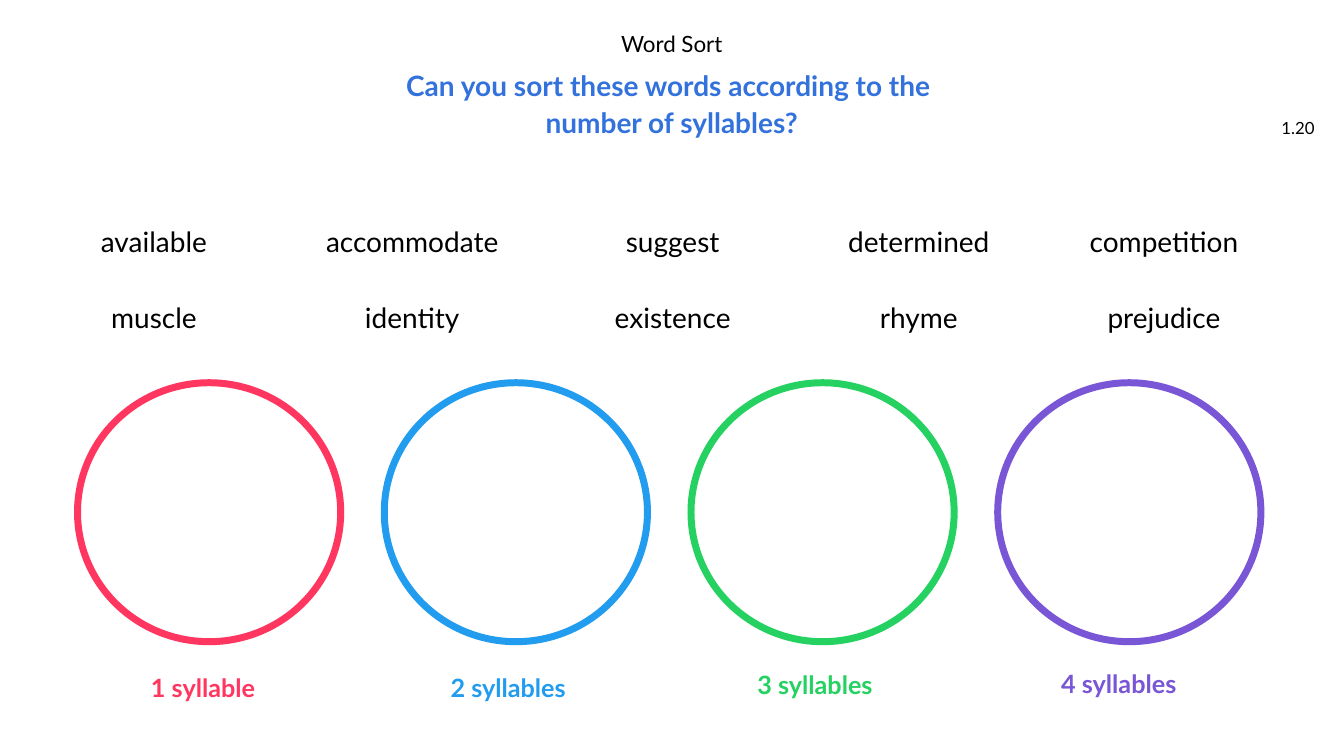
from pptx import Presentation
from pptx.dml.color import RGBColor
from pptx.enum.shapes import MSO_SHAPE
from pptx.enum.text import MSO_ANCHOR, MSO_AUTO_SIZE, PP_ALIGN
from pptx.util import Pt

CENTER, LEFT, RIGHT = PP_ALIGN.CENTER, PP_ALIGN.LEFT, PP_ALIGN.RIGHT
TOP, MIDDLE = MSO_ANCHOR.TOP, MSO_ANCHOR.MIDDLE
FIXED = MSO_AUTO_SIZE.NONE
OVAL = MSO_SHAPE.OVAL
TITLE_ONLY = 5

FONT = "Lato"
COLORS = {
    "black": "000000",
    "title": "3372DC",
    "red": "FF3760",
    "blue": "219CEE",
    "green": "25D160",
    "purple": "7956D6",
}
WORD_ROWS = [
    ["available", "accommodate", "suggest", "determined", "competition"],
    ["muscle", "identity", "existence", "rhyme", "prejudice"],
]
WORD_CENTERS = [110, 294.5, 480.5, 656.3, 831.5]
GROUPS = [
    ("1 syllable", "red", 45.4, 203.2),
    ("2 syllables", "blue", 40.3, 203.2),
    ("3 syllables", "green", 40.3, 201),
    ("4 syllables", "purple", 38.2, 200.4),
]


def place(shape, left, top, width, height):
    shape.left, shape.top = Pt(left), Pt(top)
    shape.width, shape.height = Pt(width), Pt(height)


def write(shape, text, size=20, color="black", bold=False, align=CENTER,
          anchor=MIDDLE, spacing=None, wrap=True):
    frame = shape.text_frame
    frame.auto_size = FIXED
    frame.word_wrap = wrap
    frame.vertical_anchor = anchor
    frame.text = text
    for para in frame.paragraphs:
        para.alignment = align
        para.line_spacing = spacing
        for span in para.runs:
            span.font.name = FONT
            span.font.size = Pt(size)
            span.font.bold = bold
            span.font.color.rgb = RGBColor.from_string(COLORS[color])


def add_text(page, box, text, **style):
    shape = page.shapes.add_textbox(*map(Pt, box))
    write(shape, text, **style)


def add_heading(page, left, top, width):
    add_text(page, (left + 100.8, top, width - 201.6, 25.2), "Word Sort",
             size=16, anchor=TOP, spacing=0.9)
    title = page.shapes.title
    place(title, left, top + 23, width, 59)
    write(title, "Can you sort these words according to the \nnumber of syllables?",
          color="title", bold=True, spacing=Pt(27))


def add_word_bank(page, top, width=174, height=33.8, row_step=54):
    for row, words in enumerate(WORD_ROWS):
        for center, word in zip(WORD_CENTERS, words):
            box = (center - width / 2, top + row * row_step, width, height)
            add_text(page, box, word, spacing=Pt(27))


def add_sorting_circles(page, left, top, step=219.1, width=188, height=185):
    for index, (label, color, label_left, label_top) in enumerate(GROUPS):
        circle_left = left + index * step
        circle = page.shapes.add_shape(OVAL, *map(Pt, (circle_left, top, width, height)))
        circle.shadow.inherit = False
        circle.fill.background()
        circle.line.color.rgb = RGBColor.from_string(COLORS[color])
        circle.line.width = Pt(5)
        add_text(page, (circle_left + label_left, top + label_top, 119, 28.8), label,
                 size=18, color=color, bold=True, align=LEFT, anchor=TOP, wrap=False)


def main():
    deck = Presentation()
    deck.slide_width, deck.slide_height = Pt(960), Pt(540)
    page = deck.slides.add_slide(deck.slide_layouts[TITLE_ONLY])
    add_heading(page, 174.2, 20.2, 611.3)
    add_text(page, (900.7, 77, 45.4, 28.8), "1.20", size=12, align=RIGHT)
    add_word_bank(page, 154.1)
    add_sorting_circles(page, 55.4, 273.4)
    deck.save("out.pptx")


if __name__ == "__main__":
    main()
